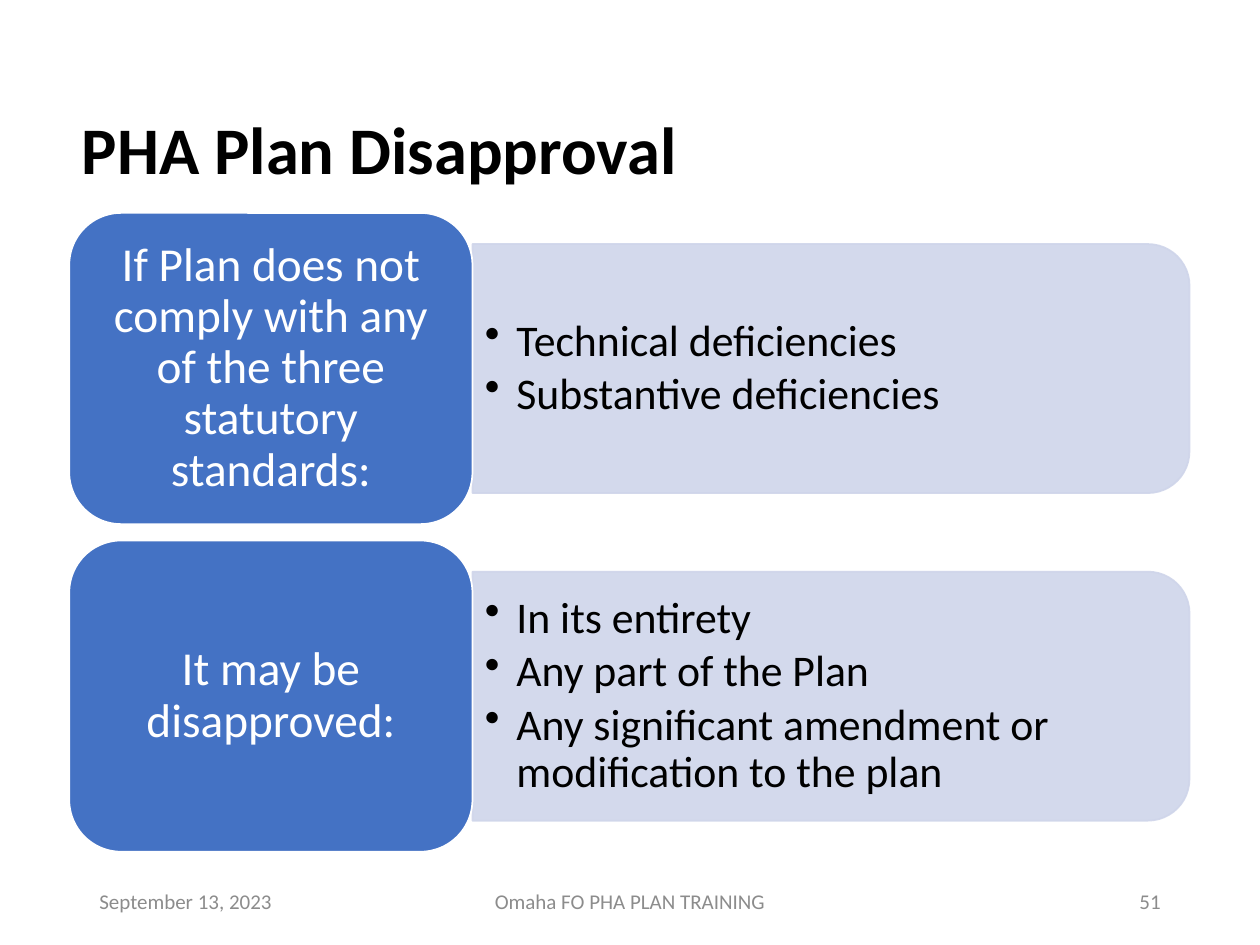
import pptx
import pptx.util
import pptx.dml.color
import pptx.enum.shapes
import pptx.enum.text
import pptx.oxml
import pptx.oxml.ns

Inches = pptx.util.Inches
Pt = pptx.util.Pt
RGB = pptx.dml.color.RGBColor
SHAPE = pptx.enum.shapes.MSO_SHAPE
ALIGN = pptx.enum.text.PP_ALIGN
MIDDLE = pptx.enum.text.MSO_ANCHOR.MIDDLE
qn = pptx.oxml.ns.qn

BLUE = RGB(0x44, 0x72, 0xC4)
PALE = RGB(0xCF, 0xD5, 0xEA)
WHITE = RGB(0xFF, 0xFF, 0xFF)
BLACK = RGB(0, 0, 0)
GRAY = RGB(0x8C, 0x8C, 0x8C)
FONT = "Calibri"

ROWS = [
    ("If Plan does not comply with any of the three statutory standards:",
     ["Technical deficiencies", "Substantive deficiencies"]),
    ("It may be disapproved:",
     ["In its entirety", "Any part of the Plan",
      "Any significant amendment or modification to the plan"]),
]
FOOT = [
    ("September 13, 2023", 0.69, 2.25, ALIGN.LEFT),
    ("Omaha FO PHA PLAN TRAINING", 3.31, 3.38, ALIGN.CENTER),
    ("51", 7.06, 2.25, ALIGN.RIGHT),
]


def style(para, size, color, align=ALIGN.LEFT, bold=False):
    para.alignment = align
    font = para.font
    font.name, font.size, font.bold = FONT, Pt(size), bold
    font.color.rgb = color


def set_frame(frame, side=0.1, top=0.05):
    frame.word_wrap = True
    frame.vertical_anchor = MIDDLE
    frame.margin_left = frame.margin_right = Inches(side)
    frame.margin_top = frame.margin_bottom = Inches(top)


def add_bullet(para):
    props = para._p.get_or_add_pPr()
    props.set("marL", str(Inches(0.25)))
    props.set("indent", str(-Inches(0.25)))
    mark = pptx.oxml.parse_xml(
        '<a:buChar xmlns:a="http://schemas.openxmlformats.org/drawingml/2006/main" char="•"/>')
    props.append(mark)


def paint(shape, fill, line):
    shape.shadow.inherit = False
    shape.fill.solid()
    shape.fill.fore_color.rgb = fill
    shape.line.color.rgb = line
    shape.line.width = Pt(1)


def fade(shape, share):
    for color in shape._element.spPr.iter(qn("a:srgbClr")):
        alpha = color.makeelement(qn("a:alpha"), {"val": str(share * 1000)})
        color.append(alpha)


def add_title(slide, left, top, width, height):
    title = slide.shapes.title
    title.left, title.top = Inches(left), Inches(top)
    title.width, title.height = Inches(width), Inches(height)
    set_frame(title.text_frame)
    title.text_frame.text = "PHA Plan Disapproval"
    para = title.text_frame.paragraphs[0]
    para.line_spacing = 0.9
    style(para, 38, BLACK, bold=True)


def add_row(slide, left, top, width, height, label, items):
    shapes = slide.shapes
    part = 3.2
    long, thick = width - part, height * 0.8
    start, mid = left + part, top + height / 2

    # Pale bar, turned so that its round corners face right
    bar = shapes.add_shape(
        SHAPE.ROUND_2_SAME_RECTANGLE,
        Inches(start + (long - thick) / 2), Inches(mid - long / 2),
        Inches(thick), Inches(long))
    bar.rotation = 90
    paint(bar, PALE, PALE)
    fade(bar, 90)

    # Bullets over the bar
    box = shapes.add_textbox(Inches(start), Inches(mid - 0.89),
                             Inches(long - 0.1), Inches(1.78))
    frame = box.text_frame
    set_frame(frame)
    for i, item in enumerate(items):
        para = frame.add_paragraph() if i else frame.paragraphs[0]
        para.text = item
        para.line_spacing = 0.9
        para.space_after = Pt(3.5)
        add_bullet(para)
        style(para, 25, BLACK)

    # Label block
    block = shapes.add_shape(SHAPE.ROUNDED_RECTANGLE, Inches(left), Inches(top),
                             Inches(part), Inches(height))
    paint(block, BLUE, WHITE)
    set_frame(block.text_frame, 0.11, 0.06)
    para = block.text_frame.paragraphs[0]
    para.text = label
    para.line_spacing = 0.9
    style(para, 27, WHITE, ALIGN.CENTER)


def add_foot(slide, top, height):
    for text, left, width, align in FOOT:
        box = slide.shapes.add_textbox(Inches(left), Inches(top),
                                       Inches(width), Inches(height))
        set_frame(box.text_frame)
        para = box.text_frame.paragraphs[0]
        para.text = text
        style(para, 12, GRAY, align)


def main():
    deck = pptx.Presentation()
    deck.slide_width, deck.slide_height = Inches(10), Inches(7.5)
    slide = deck.slides.add_slide(deck.slide_layouts[5])
    add_title(slide, 0.55, 0.74, 8.62, 0.95)
    for i, (label, items) in enumerate(ROWS):
        add_row(slide, 0.55, 1.69 + i * 2.6, 8.89, 2.47, label, items)
    add_foot(slide, 6.95, 0.4)
    deck.save("out.pptx")


if __name__ == "__main__":
    main()
